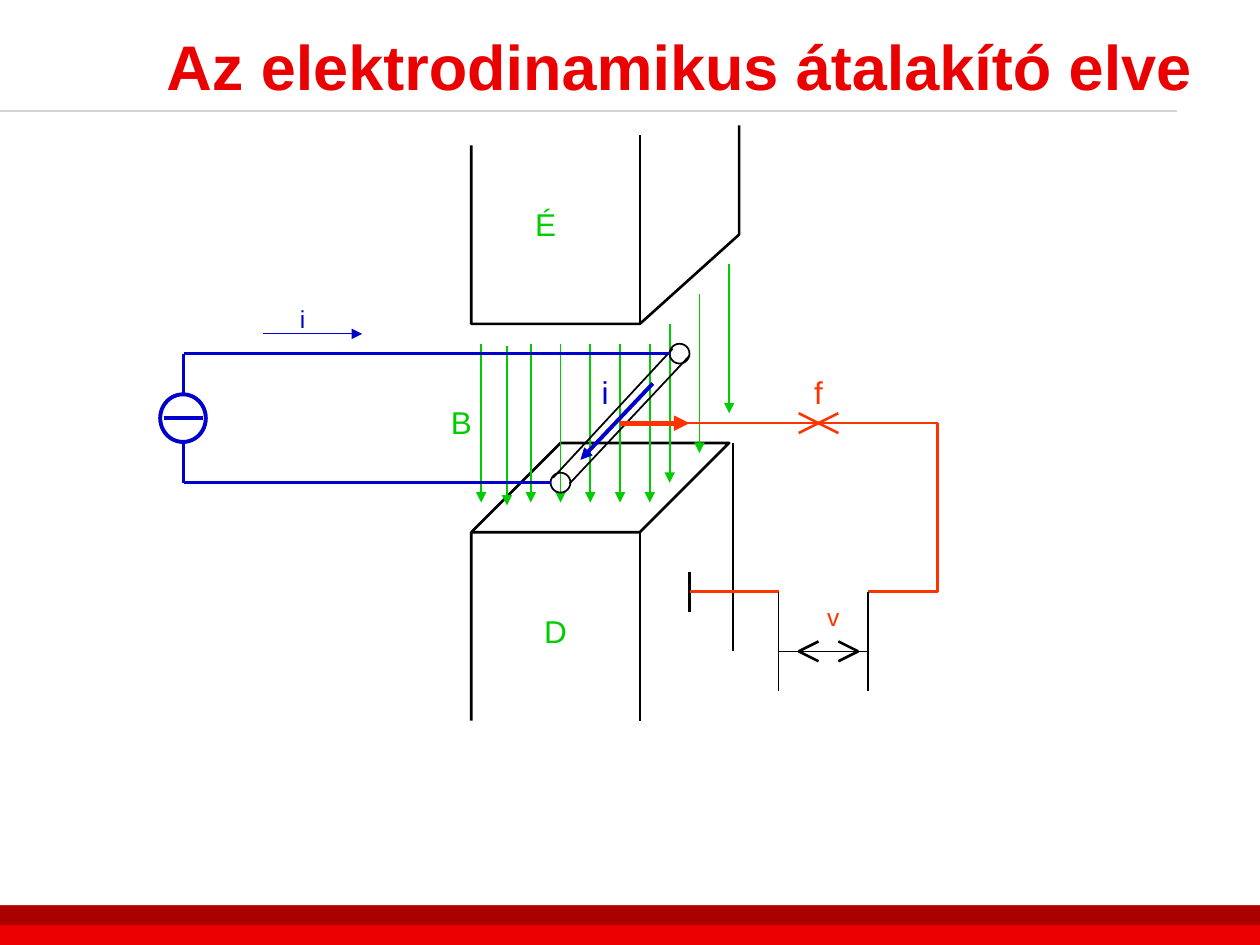
"""Build the slide on the principle of the electrodynamic transducer."""
from typing import NamedTuple

from lxml import etree
from pptx import Presentation
from pptx.dml.color import RGBColor
from pptx.enum.shapes import MSO_CONNECTOR, MSO_SHAPE
from pptx.enum.text import MSO_ANCHOR, MSO_AUTO_SIZE, PP_ALIGN
from pptx.oxml.ns import qn
from pptx.util import Inches, Mm, Pt

STRAIGHT = MSO_CONNECTOR.STRAIGHT
RECTANGLE, OVAL = MSO_SHAPE.RECTANGLE, MSO_SHAPE.OVAL
MIDDLE, TOP = MSO_ANCHOR.MIDDLE, MSO_ANCHOR.TOP
LEFT, CENTER = PP_ALIGN.LEFT, PP_ALIGN.CENTER
FIXED_SIZE = MSO_AUTO_SIZE.NONE

RED = RGBColor(0xEA, 0x00, 0x00)
DARK_RED = RGBColor(0xAA, 0x00, 0x00)
GRAY = RGBColor(0xD4, 0xD4, 0xD4)
BLACK = RGBColor(0x00, 0x00, 0x00)
GREEN = RGBColor(0x00, 0xCC, 0x00)
BLUE = RGBColor(0x00, 0x00, 0xCC)
ORANGE = RGBColor(0xFF, 0x33, 0x00)

FONT = "Arial"
CELL = Mm(2)
WIDTH, HEIGHT = Inches(10), Inches(7.5)


class Stroke(NamedTuple):
    """A straight line between two grid points."""
    start: tuple[float, float]
    end: tuple[float, float]
    color: RGBColor = BLACK
    points: float = 1.5
    arrow: bool = False


class Circle(NamedTuple):
    """An outlined ellipse placed in grid cells."""
    left: float
    top: float
    columns: float
    rows: float
    color: RGBColor
    points: float


class Label(NamedTuple):
    """A centred text placed in grid cells."""
    text: str
    left: float
    top: float
    columns: float
    color: RGBColor
    size: int = 18


POLES = [
    [(47, 14), (47, 32), (64, 32), (74, 23), (74, 12)],
    [(47, 72), (47, 53), (64, 53), (73, 44), (56, 44), (47, 53)],
]
POLE_EDGES = [
    Stroke((64, 32), (64, 13)),
    Stroke((64, 53), (64, 72)),
    Stroke((73.4, 44), (73.4, 65)),
]
FIELD_ROWS = [(column, 34, 50) for column in (48, 53, 56, 59, 62, 65)]
FIELD_ROWS += [(67, 32, 48), (70, 29, 45), (73, 26, 41), (50.6, 34.2, 50.3)]
FIELD = [Stroke((column, top), (column, bottom), GREEN, 1, True)
         for column, top, bottom in FIELD_ROWS]
CIRCLES = [
    Circle(55, 47, 2, 2, BLACK, 1),
    Circle(67, 34, 2, 2, BLACK, 1),
    Circle(15.65, 39.1, 4.6, 4.8, BLUE, 2.25),
]
ROD = [
    Stroke((55.25, 47.5), (67.3, 34.5), BLACK, 1),
    Stroke((56.9, 48.1), (69, 35.2), BLACK, 1),
]
CIRCUIT = [
    Stroke((55, 48), (18, 48), BLUE),
    Stroke((67, 35), (18, 35), BLUE),
    Stroke((18, 35), (18, 39), BLUE),
    Stroke((18, 44), (18, 48), BLUE),
    Stroke((16, 41.5), (20, 41.5), BLUE, 2.25),
    Stroke((26, 33), (36, 33), BLUE, 0.75, True),
]
MECHANISM = [
    Stroke((63, 42), (94, 42), ORANGE),
    Stroke((69, 57), (69, 61), BLACK, 2.25),
    Stroke((69, 59), (78, 59), ORANGE),
    Stroke((94, 42), (94, 59), ORANGE),
    Stroke((87, 59), (94, 59), ORANGE),
    Stroke((78, 59), (78, 69), BLACK, 0.75),
    Stroke((87, 59), (87, 69), BLACK, 0.75),
    Stroke((78, 65), (87, 65), BLACK, 0.75),
]
VELOCITY_HEADS = [Stroke((tip, 65), (tail, row))
                  for tip, tail in ((80, 82), (86, 84)) for row in (64, 66)]
FORCE_CROSS = [
    Stroke((80, 41), (84, 43), ORANGE),
    Stroke((84, 41), (80, 43), ORANGE),
]
VECTORS = [
    Stroke((62, 42), (69, 42), ORANGE, 3, True),
    Stroke((65.3, 38), (58, 45.7), BLUE, 2.25, True),
]
LABELS = [
    Label("É", 51, 20, 7, GREEN),
    Label("D", 52, 61, 7, GREEN),
    Label("i", 28, 30, 4, BLUE, 14),
    Label("B", 44, 40, 4, GREEN),
    Label("v", 81, 60, 5, ORANGE, 14),
    Label("f", 79, 37, 6, ORANGE),
    Label("i", 59, 37, 3, BLUE),
]


def column_x(column: float) -> int:
    """Return the horizontal place of a grid column."""
    return int(Mm(1) + column * CELL)


def row_y(row: float) -> int:
    """Return the vertical place of a grid row."""
    return int(Mm(1.3) + row * CELL)


def draw_line(slide, ends: tuple, color: RGBColor, points: float, arrow: bool = False) -> None:
    """Draw a straight line, with an arrowhead at its end if wanted."""
    connector = slide.shapes.add_connector(STRAIGHT, *ends)
    connector.line.color.rgb = color
    connector.line.width = Pt(points)
    properties = connector._element.spPr
    if arrow:
        etree.SubElement(properties.find(qn("a:ln")), qn("a:tailEnd"), type="triangle")
    etree.SubElement(properties, qn("a:effectLst"))


def draw_strokes(slide, strokes: list[Stroke]) -> None:
    """Draw lines given in grid points."""
    for stroke in strokes:
        ends = (column_x(stroke.start[0]), row_y(stroke.start[1]),
                column_x(stroke.end[0]), row_y(stroke.end[1]))
        draw_line(slide, ends, stroke.color, stroke.points, stroke.arrow)


def outline(shape, color: RGBColor, points: float) -> None:
    """Leave only a plain outline on a shape."""
    shape.shadow.inherit = False
    shape.fill.background()
    shape.line.color.rgb = color
    shape.line.width = Pt(points)


def draw_pole(slide, corners: list[tuple[int, int]]) -> None:
    """Draw the open outline of a magnet pole."""
    places = [(column_x(column), row_y(row)) for column, row in corners]
    builder = slide.shapes.build_freeform(*places[0])
    builder.add_line_segments(places[1:], close=False)
    outline(builder.convert_to_shape(), BLACK, 1.5)


def draw_circle(slide, circle: Circle) -> None:
    """Draw an outlined ellipse."""
    shape = slide.shapes.add_shape(
        OVAL, column_x(circle.left), row_y(circle.top),
        int(circle.columns * CELL), int(circle.rows * CELL))
    outline(shape, circle.color, circle.points)


def write(text_frame, text: str, size: int, color: RGBColor, bold: bool, alignment) -> None:
    """Fill a text frame with one formatted paragraph."""
    text_frame.text = text
    text_frame.word_wrap = True
    paragraph = text_frame.paragraphs[0]
    paragraph.alignment = alignment
    font = paragraph.runs[0].font
    font.name, font.size, font.bold = FONT, Pt(size), bold
    font.color.rgb = color


def draw_label(slide, label: Label) -> None:
    """Write a label without margins."""
    box = slide.shapes.add_textbox(column_x(label.left), row_y(label.top),
                                   int(label.columns * CELL), int(Pt(label.size * 1.2)))
    frame = box.text_frame
    frame.margin_left = frame.margin_right = frame.margin_top = frame.margin_bottom = 0
    frame.vertical_anchor = TOP
    write(frame, label.text, label.size, label.color, False, CENTER)


def draw_frame(slide) -> None:
    """Draw the footer bands, the title rule and the title."""
    for color, share in ((RED, 0.042), (DARK_RED, 0.021)):
        band = slide.shapes.add_shape(RECTANGLE, 0, int(HEIGHT * 0.958), WIDTH, int(HEIGHT * share))
        band.shadow.inherit = False
        band.fill.solid()
        band.fill.fore_color.rgb = color
        band.line.fill.background()
    draw_line(slide, (0, Inches(0.88), Inches(9.34), Inches(0.88)), GRAY, 1.5)
    title = slide.shapes.title
    title.left, title.top, title.width, title.height = map(Inches, (1.22, 0.08, 8.74, 0.87))
    title.text_frame.vertical_anchor = MIDDLE
    title.text_frame.auto_size = FIXED_SIZE
    write(title.text_frame, "Az elektrodinamikus átalakító elve", 36, RED, True, LEFT)


def main() -> None:
    """Build and save the presentation."""
    presentation = Presentation()
    presentation.slide_width, presentation.slide_height = WIDTH, HEIGHT
    slide = presentation.slides.add_slide(presentation.slide_layouts[5])
    draw_frame(slide)
    for corners in POLES:
        draw_pole(slide, corners)
    draw_strokes(slide, POLE_EDGES + FIELD)
    for circle in CIRCLES:
        draw_circle(slide, circle)
    draw_strokes(slide, ROD + CIRCUIT + MECHANISM + VELOCITY_HEADS + FORCE_CROSS + VECTORS)
    for label in LABELS:
        draw_label(slide, label)
    presentation.save("out.pptx")


if __name__ == "__main__":
    main()
